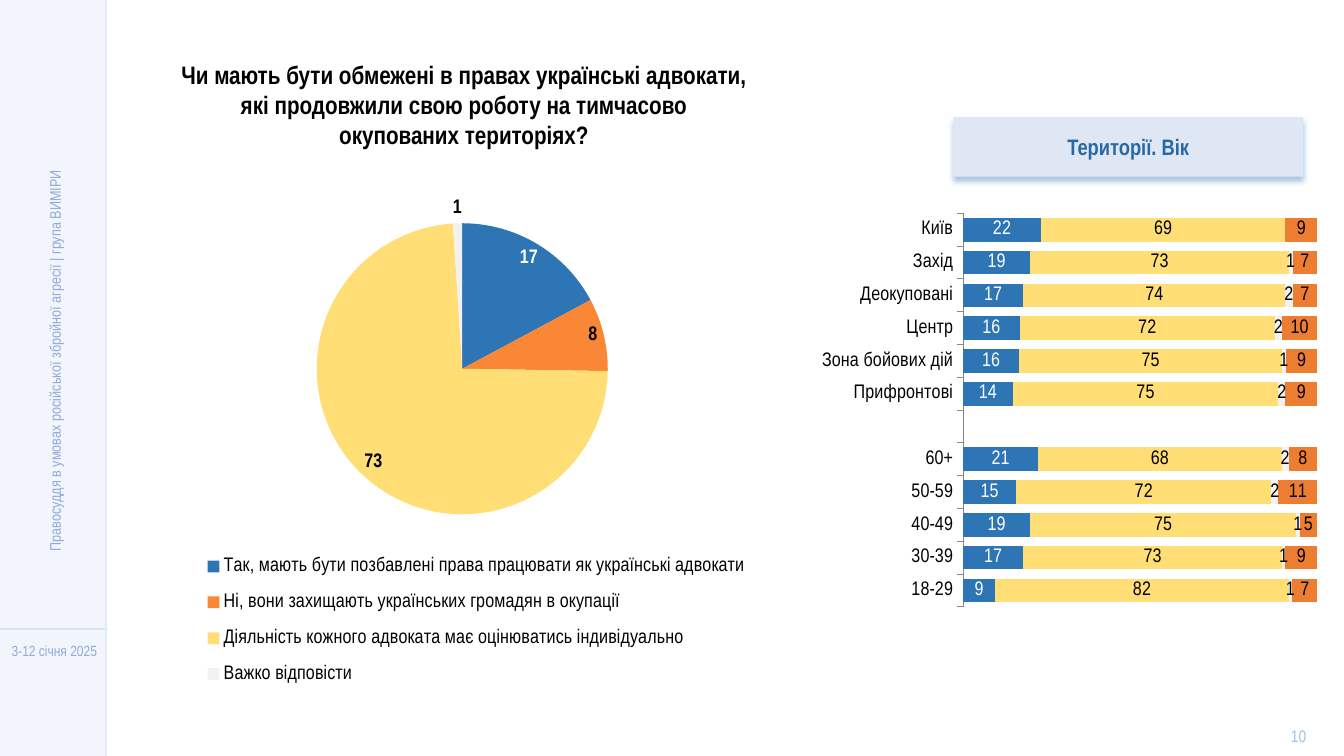
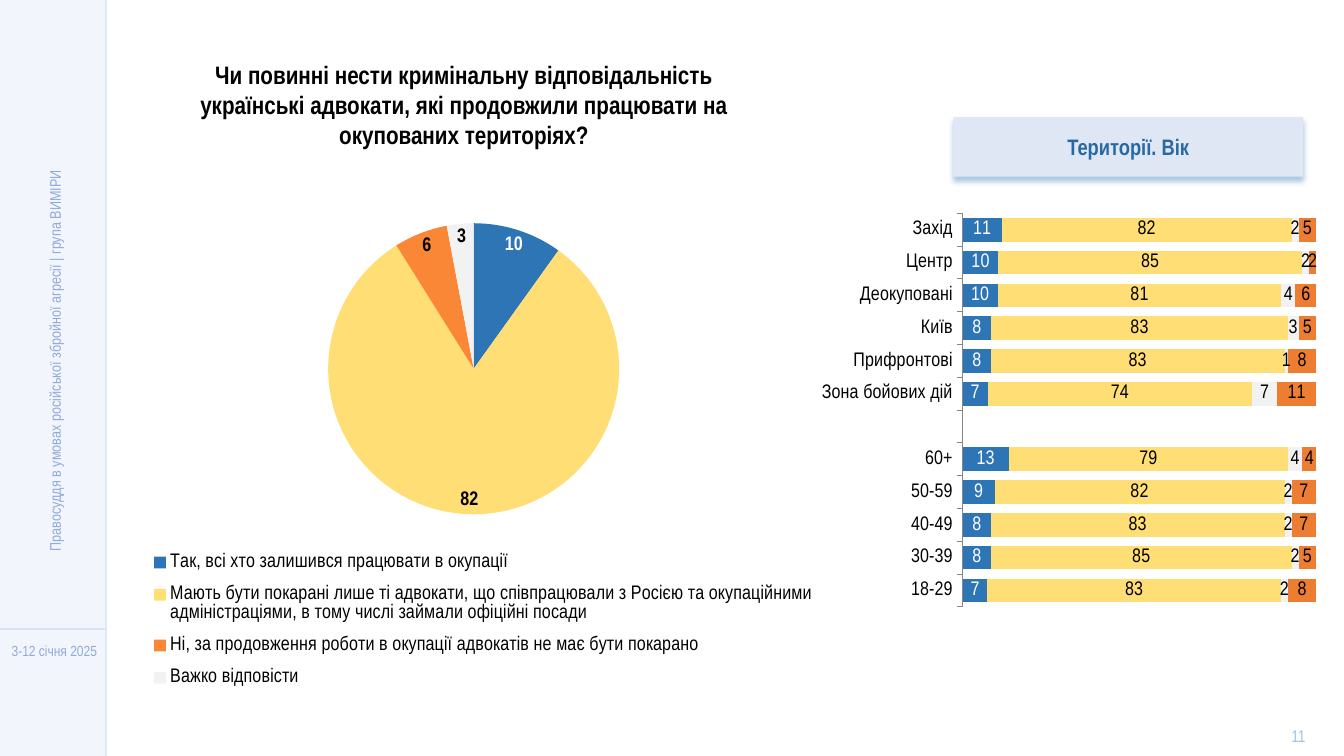
from lxml.etree import SubElement
from pptx import Presentation
from pptx.chart.data import CategoryChartData
from pptx.dml.color import RGBColor
from pptx.enum.chart import XL_CHART_TYPE, XL_LABEL_POSITION, XL_LEGEND_POSITION, XL_TICK_MARK
from pptx.enum.shapes import MSO_CONNECTOR, MSO_SHAPE
from pptx.enum.text import MSO_ANCHOR, PP_ALIGN
from pptx.oxml.ns import qn
from pptx.util import Cm, Pt

FONT = "Arial Narrow"
BLACK = RGBColor(0x00, 0x00, 0x00)
WHITE = RGBColor(0xFF, 0xFF, 0xFF)
BLUE = RGBColor(0x2E, 0x75, 0xB6)
YELLOW = RGBColor(0xFF, 0xDE, 0x75)
ORANGE = RGBColor(0xFA, 0x87, 0x36)
RUST = RGBColor(0xED, 0x7D, 0x31)
GRAY = RGBColor(0xF2, 0xF2, 0xF2)
AXIS = RGBColor(0x86, 0x86, 0x86)
BAND = RGBColor(0xDA, 0xE3, 0xF3)
BAND_EDGE = RGBColor(0xDE, 0xEB, 0xF7)
BAND_TEXT = RGBColor(0x8F, 0xAA, 0xDC)
NUMBER = RGBColor(0x9D, 0xC3, 0xE6)
HEADER = RGBColor(0xDF, 0xE7, 0xF5)
HEADER_TEXT = RGBColor(0x29, 0x69, 0xA3)

WIDTH, HEIGHT = 33.87, 19.05
BAND_W, RULE_Y = 2.67, 15.85
SURVEY = "Правосуддя в умовах російської збройної агресії | група ВИМІРИ"
DATES = "3-12 січня 2025"
BREAKDOWN = "Території. Вік"
AGES = ["60+", "50-59", "40-49", "30-39", "18-29"]
BAR_COLORS = [BLUE, YELLOW, GRAY, RUST]
FIRST_NUMBER = 10

SLIDES = [
    {
        "title": "Чи мають бути обмежені в правах українські адвокати, "
                 "які продовжили свою роботу на тимчасово окупованих територіях?",
        "answers": [
            ("Так, мають бути позбавлені права працювати як українські адвокати", 17, BLUE),
            ("Ні, вони захищають українських громадян в окупації", 8, ORANGE),
            ("Діяльність кожного адвоката має оцінюватись індивідуально", 73, YELLOW),
            ("Важко відповісти", 1, GRAY),
        ],
        "pie_area": (0.276, 0.105, 0.408, 0.551),
        "legend_area": (0.11, 0.69, 0.78, 0.29),
        "regions": ["Київ", "Захід", "Деокуповані", "Центр", "Зона бойових дій", "Прифронтові"],
        "bars": [
            [22, 19, 17, 16, 16, 14, None, 21, 15, 19, 17, 9],
            [69, 73, 74, 72, 75, 75, None, 68, 72, 75, 73, 82],
            [None, 1, 2, 2, 1, 2, None, 2, 2, 1, 1, 1],
            [9, 7, 7, 10, 9, 9, None, 8, 11, 5, 9, 7],
        ],
    },
    {
        "title": "Чи повинні нести кримінальну відповідальність українські адвокати, "
                 "які продовжили працювати на окупованих територіях?",
        "answers": [
            ("Так, всі хто залишився працювати в окупації", 10, BLUE),
            ("Мають бути покарані лише ті адвокати, що співпрацювали з Росією та окупаційними "
             "адміністраціями, в тому числі займали офіційні посади", 82, YELLOW),
            ("Ні, за продовження роботи в окупації адвокатів не має бути покарано", 6, ORANGE),
            ("Важко відповісти", 3, GRAY),
        ],
        "pie_area": (0.292, 0.105, 0.408, 0.551),
        "legend_area": (0.03, 0.69, 0.96, 0.29),
        "regions": ["Захід", "Центр", "Деокуповані", "Київ", "Прифронтові", "Зона бойових дій"],
        "bars": [
            [11, 10, 10, 8, 8, 7, None, 13, 9, 8, 8, 7],
            [82, 85, 81, 83, 83, 74, None, 79, 82, 83, 85, 83],
            [2, 2, 4, 3, 1, 7, None, 4, 2, 2, 2, 2],
            [5, 2, 6, 5, 8, 11, None, 4, 7, 7, 5, 8],
        ],
    },
]


def box(*sides):
    return [Cm(side) for side in sides]


def set_font(font, size, color, bold=False):
    font.name, font.size, font.bold = FONT, Pt(size), bold
    font.color.rgb = color


def write(sp, text, size, color, bold=False, leading=None, after=0):
    tf = sp.text_frame
    tf.word_wrap = True
    tf.vertical_anchor = MSO_ANCHOR.MIDDLE
    p = tf.paragraphs[0]
    p.alignment = PP_ALIGN.CENTER
    p.space_after = Pt(after)
    if leading:
        p.line_spacing = Pt(leading)
    r = p.add_run()
    r.text = text
    set_font(r.font, size, color, bold)


def add_text(s, area, *args, **kwargs):
    sp = s.shapes.add_textbox(*box(*area))
    write(sp, *args, **kwargs)
    return sp


def add_rect(s, area, color):
    sp = s.shapes.add_shape(MSO_SHAPE.RECTANGLE, *box(*area))
    sp.shadow.inherit = False
    sp.fill.solid()
    sp.fill.fore_color.rgb = color
    sp.line.fill.background()
    return sp


def add_line(s, ends, color):
    line = s.shapes.add_connector(MSO_CONNECTOR.STRAIGHT, *box(*ends))
    line.line.color.rgb = color
    line.line.width = Pt(1)
    SubElement(line._element.spPr, qn("a:effectLst"))


def set_alpha(parent, percent):
    clr = parent.find(".//" + qn("a:srgbClr"))
    SubElement(clr, qn("a:alpha"), val=str(percent * 1000))


def add_frame(s, number):
    band = add_rect(s, (0, 0, BAND_W, HEIGHT), BAND)
    set_alpha(band._element.spPr, 33)
    add_line(s, (BAND_W, RULE_Y, 0, RULE_Y), BAND)
    add_text(s, (0, 16.05, 2.74, 0.76), DATES, 10.5, BAND_TEXT, leading=11)
    add_line(s, (BAND_W, 0, BAND_W, HEIGHT), BAND_EDGE)
    survey = add_text(s, (-5.23, 8.71, 12.98, 0.76), SURVEY, 11, BAND_TEXT, leading=20)
    survey.rotation = 270
    add_text(s, (31.9, 18.26, 1.65, 0.56), str(number), 12, NUMBER)


def add_header(s):
    sp = add_rect(s, (24.03, 2.95, 8.81, 1.5), HEADER)
    effects = sp._element.spPr.find(qn("a:effectLst"))
    shadow = SubElement(effects, qn("a:outerShdw"), blurRad=str(Pt(4)), dist=str(Pt(3)),
                        dir="5400000", algn="t", rotWithShape="0")
    SubElement(shadow, qn("a:srgbClr"), val=str(BLUE))
    set_alpha(shadow, 40)
    write(sp, BREAKDOWN, 16, HEADER_TEXT, bold=True)


def place(element, index, area, inner=False):
    for old in element.findall(qn("c:layout")):
        element.remove(old)
    layout = SubElement(element, qn("c:layout"))
    element.insert(index, layout)
    manual = SubElement(layout, qn("c:manualLayout"))
    if inner:
        SubElement(manual, qn("c:layoutTarget"), val="inner")
    for tag in ("xMode", "yMode"):
        SubElement(manual, qn("c:" + tag), val="edge")
    for tag, value in zip("xywh", area):
        SubElement(manual, qn("c:" + tag), val=str(value))


def add_chart(s, kind, area, cats, series, plot_area):
    data = CategoryChartData(number_format="0")
    data.categories = cats
    for i, values in enumerate(series, 1):
        data.add_series(f"Series {i}", values)
    chart = s.shapes.add_chart(kind, *box(*area), data).chart
    chart.has_title = False
    chart.has_legend = False
    set_font(chart.font, 14, BLACK)
    place(chart._chartSpace.chart.plotArea, 0, plot_area, inner=True)
    return chart


def show_values(labels, position, color, bold=False):
    labels.show_value = True
    labels.number_format = "0"
    labels.number_format_is_linked = False
    labels.position = position
    set_font(labels.font, 14, color, bold)


def add_pie(s, answers, pie_area, legend_area):
    cats, values, colors = zip(*answers)
    chart = add_chart(s, XL_CHART_TYPE.PIE, (3.02, 3.99, 17.98, 13.94), cats, [values], pie_area)
    chart.has_legend = True
    legend = chart.legend
    legend.position = XL_LEGEND_POSITION.RIGHT
    legend.include_in_layout = False
    set_font(legend.font, 14, BLACK)
    place(legend._element, 1, legend_area)
    pie = chart.plots[0].series[0]
    show_values(pie.data_labels, XL_LABEL_POSITION.BEST_FIT, BLACK, bold=True)
    for i, color in enumerate(colors):
        point = pie.points[i]
        point.format.fill.solid()
        point.format.fill.fore_color.rgb = color
    first = pie.points[0].data_label
    set_font(first.font, 14, WHITE, bold=True)
    first.position = XL_LABEL_POSITION.BEST_FIT


def add_bars(s, regions, series):
    chart = add_chart(s, XL_CHART_TYPE.BAR_STACKED_100, (16.97, 5.05, 16.23, 10.54),
                      regions + [""] + AGES, series, (0.45, 0.031, 0.55, 0.941))
    axis = chart.category_axis
    axis.reverse_order = True
    axis.major_tick_mark = XL_TICK_MARK.OUTSIDE
    axis.format.line.color.rgb = AXIS
    set_font(axis.tick_labels.font, 14, BLACK)
    chart.value_axis.visible = False
    chart.value_axis.has_major_gridlines = False
    plot = chart.plots[0]
    plot.gap_width, plot.overlap = 39, 100
    plot.vary_by_categories = False
    for bar, color in zip(plot.series, BAR_COLORS):
        bar.format.fill.solid()
        bar.format.fill.fore_color.rgb = color
        show_values(bar.data_labels, XL_LABEL_POSITION.CENTER, WHITE if color == BLUE else BLACK)


def main():
    prs = Presentation()
    prs.slide_width, prs.slide_height = box(WIDTH, HEIGHT)
    for number, item in enumerate(SLIDES, FIRST_NUMBER):
        s = prs.slides.add_slide(prs.slide_layouts[6])
        add_frame(s, number)
        add_text(s, (4.29, 1.73, 14.81, 1.8), item["title"], 18, BLACK, bold=True, after=8)
        add_pie(s, item["answers"], item["pie_area"], item["legend_area"])
        add_header(s)
        add_bars(s, item["regions"], item["bars"])
    prs.save("out.pptx")


if __name__ == "__main__":
    main()
